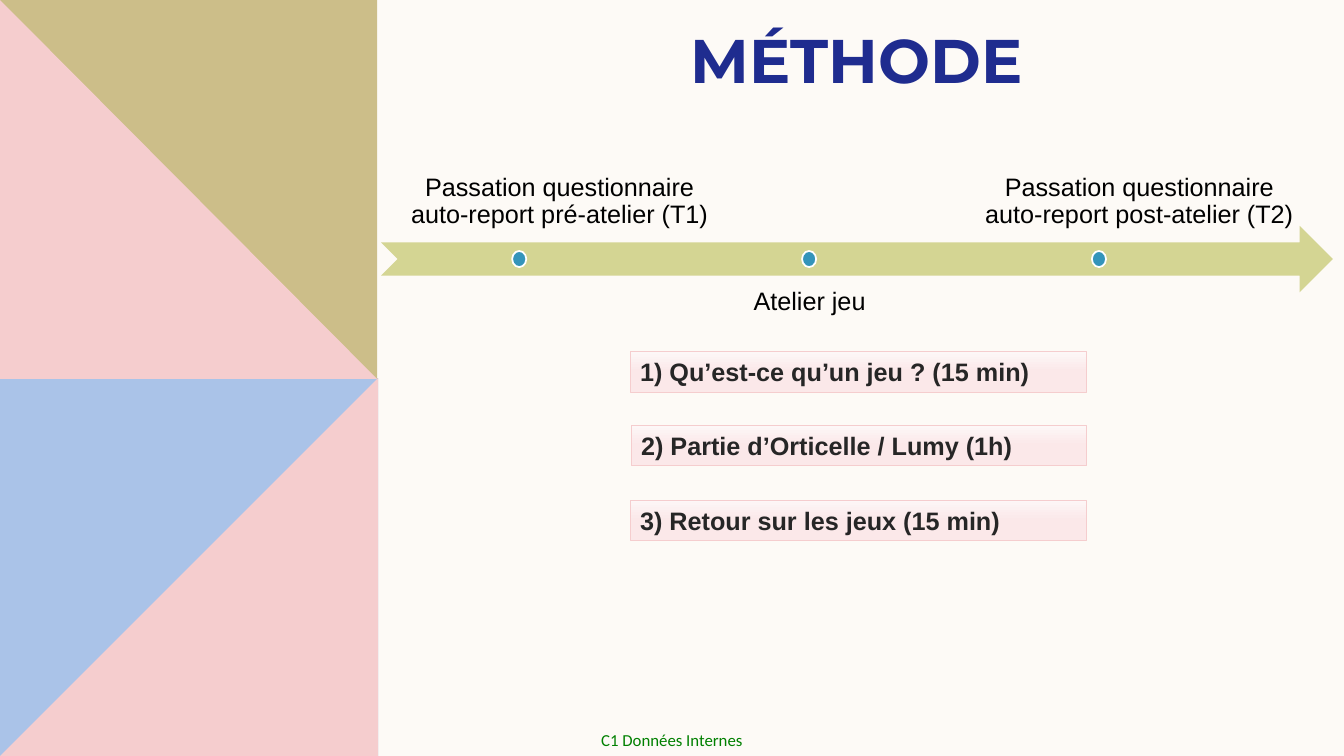
from copy import deepcopy

from pptx import Presentation
from pptx.dml.color import RGBColor
from pptx.enum.shapes import MSO_SHAPE
from pptx.enum.text import MSO_ANCHOR, PP_ALIGN
from pptx.util import Inches, Pt

RECT, OVAL, ARROW = MSO_SHAPE.RECTANGLE, MSO_SHAPE.OVAL, MSO_SHAPE.NOTCHED_RIGHT_ARROW
TOP, MIDDLE, BOTTOM = MSO_ANCHOR.TOP, MSO_ANCHOR.MIDDLE, MSO_ANCHOR.BOTTOM
LEFT, CENTER = PP_ALIGN.LEFT, PP_ALIGN.CENTER

COLORS = {
    "cream": "FDFAF6", "blue": "AAC3E8", "pink": "F5CDCE", "sand": "CCBE89",
    "olive": "D4D593", "teal": "3494BA", "white": "FFFFFF", "black": "000000",
    "navy": "1F2C8F", "green": "008000", "charcoal": "262626",
}
STEP_GRADIENT = [(0, "FDF7F7"), (0.5, "FBE8E9"), (1, "FBE5E6")]


def write(box, text, color, margins, anchor=TOP, align=CENTER, wrap=True, **font):
    frame = box.text_frame
    frame.text = text
    frame.word_wrap = wrap
    frame.vertical_anchor = anchor
    frame.margin_left = frame.margin_right = Inches(margins[0])
    frame.margin_top = frame.margin_bottom = Inches(margins[1])
    para = frame.paragraphs[0]
    para.alignment = align
    span = para.runs[0]
    for name, value in font.items():
        setattr(span.font, name, value)
    span.font.color.rgb = RGBColor.from_string(COLORS[color])
    return para


def add_block(kind, at, fill=None, line=None, weight=0):
    shape = page.shapes.add_shape(kind, *map(Inches, at))
    shape.shadow.inherit = False
    if fill:
        shape.fill.solid()
        shape.fill.fore_color.rgb = RGBColor.from_string(COLORS[fill])
    if line:
        shape.line.color.rgb = RGBColor.from_string(COLORS[line])
        shape.line.width = Pt(weight)
    else:
        shape.line.fill.background()
    return shape


deck = Presentation()
deck.slide_width, deck.slide_height = Inches(13.33), Inches(7.5)
page = deck.slides.add_slide(deck.slide_layouts[5])
page.background.fill.solid()
page.background.fill.fore_color.rgb = RGBColor.from_string(COLORS["cream"])

# Title and footer
title = page.shapes.title
title.left, title.top, title.width, title.height = map(Inches, (4.66, 0.17, 7.67, 1.47))
write(title, "MÉTHODE", "navy", (0.1, 0.05), size=Pt(44), name="Montserrat", bold=True)
footer = page.shapes.add_textbox(*map(Inches, (5.78, 7.18, 1.77, 0.32)))
write(footer, "C1 Données Internes", "green", (0, 0), anchor=MIDDLE, wrap=False,
      size=Pt(12), name="Calibri")

# Left panel: two squares, each half covered by a pink triangle
panels = [
    ((0, 3.75, 3.75, 3.75), "blue", [(3.75, 3.75), (3.75, 7.5), (0, 7.5)]),
    ((0, 0, 3.74, 3.76), "sand", [(0, 0), (3.74, 3.76), (0, 3.76)]),
]
for at, color, corners in panels:
    add_block(RECT, at, color)
    points = [(Inches(x), Inches(y)) for x, y in corners]
    builder = page.shapes.build_freeform(*points[0])
    builder.add_line_segments(points[1:])
    triangle = builder.convert_to_shape()
    triangle.shadow.inherit = False
    triangle.fill.solid()
    triangle.fill.fore_color.rgb = RGBColor.from_string(COLORS["pink"])
    triangle.line.fill.background()

# Workshop steps
steps = [
    (6.25, 3.49, "1) Qu’est-ce qu’un jeu ? (15 min)"),
    (6.26, 4.22, "2) Partie d’Orticelle / Lumy (1h)"),
    (6.25, 4.96, "3) Retour sur les jeux (15 min)"),
]
for left, top, text in steps:
    step = add_block(RECT, (left, top, 4.52, 0.4), line="pink", weight=0.5)
    step.fill.gradient()
    step.fill.gradient_angle = 270
    stop_list = step.fill._xPr.xpath(".//a:gsLst")[0]
    stop_list.append(deepcopy(stop_list[-1]))
    for stop, (position, color) in zip(step.fill.gradient_stops, STEP_GRADIENT):
        stop.position = position
        stop.color.rgb = RGBColor.from_string(color)
    write(step, text, "charcoal", (0.1, 0.05), align=LEFT,
          size=Pt(18), name="Arial", bold=True)

# Timeline
add_block(ARROW, (3.78, 2.24, 9.44, 0.66), "olive")
milestones = [
    ("Passation questionnaire auto-report pré-atelier (T1)", 3.78, 1.75, 3.54, BOTTOM),
    ("Atelier jeu", 6.66, 2.73, 2.74, TOP),
    ("Passation questionnaire auto-report post-atelier (T2)", 9.53, 1.75, 3.54, BOTTOM),
]
for index, (text, left, top, width, anchor) in enumerate(milestones):
    label = page.shapes.add_textbox(*map(Inches, (left, top, width, 0.66)))
    para = write(label, text, "black", (0.14, 0.14), anchor=anchor, size=Pt(18), name="Arial")
    para.line_spacing = 0.9
    para.space_after = Pt(8)
    add_block(OVAL, (5.08 + 2.875 * index, 2.49, 0.14, 0.16), "teal", "white", 1.25)

deck.save("out.pptx")
